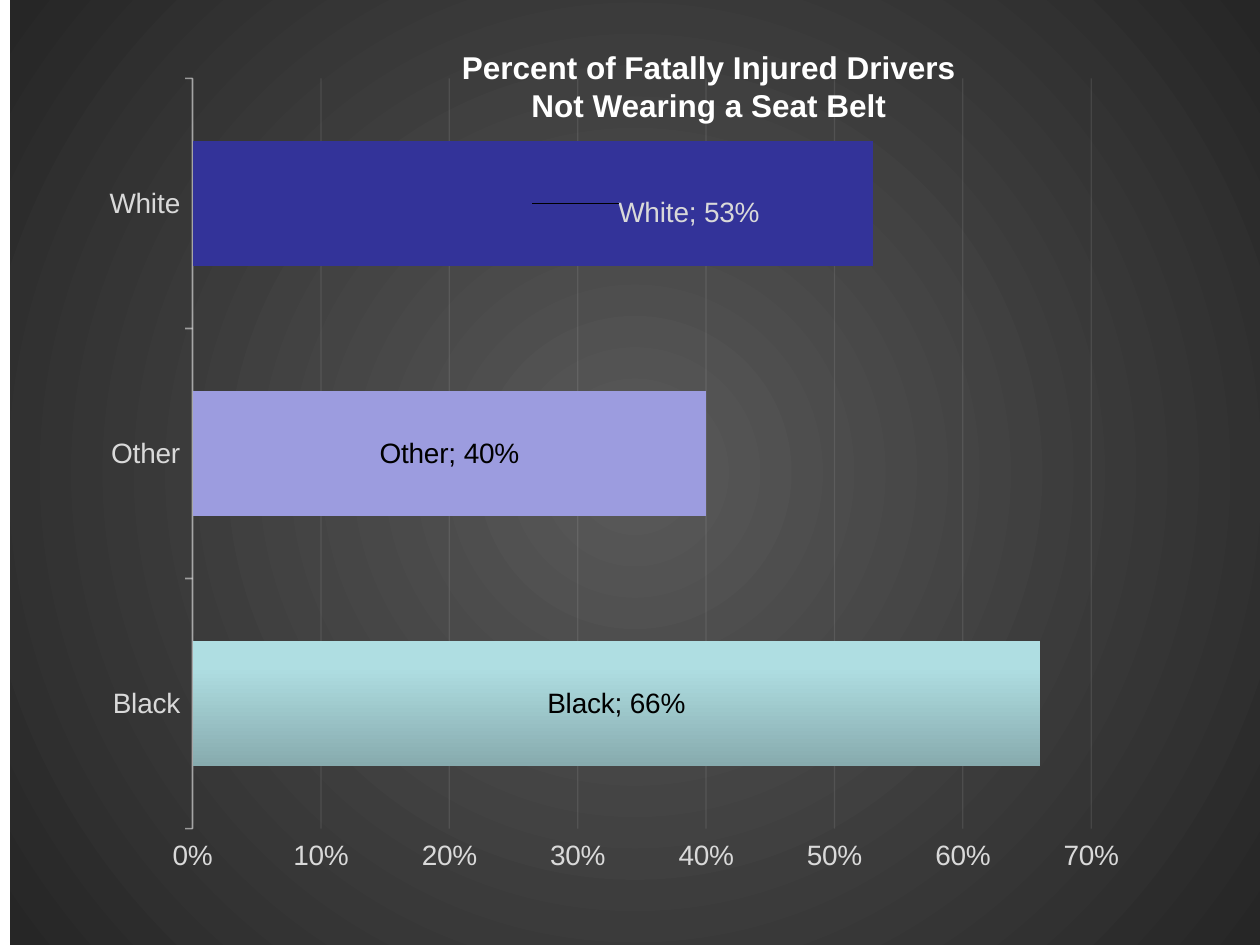
"""Builds a slide with a bar chart of drivers not wearing a seat belt."""
from lxml.etree import SubElement
from pptx import Presentation
from pptx.chart.data import CategoryChartData
from pptx.dml.color import RGBColor
from pptx.enum.chart import XL_CHART_TYPE, XL_LABEL_POSITION, XL_TICK_MARK
from pptx.enum.text import MSO_ANCHOR, PP_ALIGN
from pptx.oxml import parse_xml
from pptx.oxml.ns import nsdecls, qn
from pptx.util import Inches, Pt

COLORS = {
    "title": "FFFFFF", "label": "D9D9D9", "dark_label": "000000", "line": "F2F2F2",
    "glow": "595959", "edge": "262626",
    "teal_dark": "87ABAE", "teal": "AFDEE2", "teal_light": "AFE0E4",
    "lilac": "9C9CDF", "navy": "333399",
}
RADIAL = ('<a:path path="circle"><a:fillToRect l="50000" t="50000" '
          'r="50000" b="50000"/></a:path>')
UPWARD = '<a:lin ang="16200000" scaled="0"/>'


def rgb(name):
    return RGBColor.from_string(COLORS[name])


def gradient(stops, direction):
    marks = "".join(
        f'<a:gs pos="{position * 1000}"><a:srgbClr val="{COLORS[name]}"/></a:gs>'
        for position, name in stops)
    return parse_xml(f'<a:gradFill {nsdecls("a")} rotWithShape="1">'
                     f'<a:gsLst>{marks}</a:gsLst>{direction}</a:gradFill>')


def manual_layout(x, y, width=None, height=None):
    parts = [("x", x), ("y", y)]
    if width:
        parts = [("layoutTarget", "inner"), ("xMode", "edge"), ("yMode", "edge"),
                 *parts, ("w", width), ("h", height)]
    body = "".join(f'<c:{tag} val="{value}"/>' for tag, value in parts)
    return parse_xml(f'<c:layout {nsdecls("c")}><c:manualLayout>{body}'
                     '</c:manualLayout></c:layout>')


class SlideBuilder:
    def __init__(self, page, family="Arial"):
        self.page = page
        self.family = family

    def style(self, font, size, color, bold=False):
        font.name, font.size, font.bold = self.family, Pt(size), bold
        font.color.rgb = rgb(color)

    def stroke(self, line, width, opacity):
        line.width = Pt(width)
        line.color.rgb = rgb("line")
        for color in line._get_or_add_ln().iter(qn("a:srgbClr")):
            SubElement(color, qn("a:alpha"), val=str(opacity * 1000))

    def title(self, lines, left, top, width, height):
        box = self.page.shapes.title
        box.left, box.top, box.width, box.height = map(Inches, (left, top, width, height))
        frame = box.text_frame
        frame.word_wrap = True
        frame.vertical_anchor = MSO_ANCHOR.TOP
        frame.text = "\n".join(lines)
        for para in frame.paragraphs:
            para.alignment = PP_ALIGN.CENTER
            para.space_before = Pt(0)
            para.line_spacing = 1.0
            self.style(para.font, 18, "title", bold=True)
        tree = self.page.shapes._spTree
        tree.append(box._element)

    def bar_chart(self, values, left, top, width, height):
        data = CategoryChartData(number_format="0%")
        data.categories = list(values)
        data.add_series("Series 1", list(values.values()))
        chart = self.page.shapes.add_chart(
            XL_CHART_TYPE.BAR_CLUSTERED, *map(Inches, (left, top, width, height)), data).chart
        chart.has_legend = chart.has_title = False
        self.style(chart.font, 10, "dark_label")
        self.background(chart)
        self.axes(chart)
        plot = chart.plots[0]
        plot.gap_width = 100
        plot.vary_by_categories = False
        self.bars(plot.series[0])
        self.labels(plot)
        return chart

    def background(self, chart):
        space = chart._chartSpace
        shape = parse_xml(f'<c:spPr {nsdecls("c", "a")}><a:ln><a:noFill/></a:ln></c:spPr>')
        shape.insert(0, gradient([(0, "glow"), (100, "edge")], RADIAL))
        space.find(qn("c:chart")).addnext(shape)
        area = space.find(".//" + qn("c:plotArea"))
        for layout in area.findall(qn("c:layout")):
            area.remove(layout)
        area.insert(0, manual_layout(0.146, 0.083, 0.719, 0.794))

    def axes(self, chart):
        for axis in (chart.category_axis, chart.value_axis):
            axis.major_tick_mark = XL_TICK_MARK.OUTSIDE
            axis.minor_tick_mark = XL_TICK_MARK.NONE
            self.style(axis.tick_labels.font, 16, "label")
        self.stroke(chart.category_axis.format.line, 1, 54)
        scale = chart.value_axis
        scale.minimum_scale, scale.maximum_scale, scale.major_unit = 0, 0.7, 0.1
        scale.tick_labels.number_format = "0%"
        scale.tick_labels.number_format_is_linked = False
        scale.format.line.fill.background()
        scale.has_major_gridlines = True
        self.stroke(scale.major_gridlines.format.line, 0.75, 10)

    def bars(self, series):
        stops = [(0, "teal_dark"), (80, "teal"), (100, "teal_light")]
        series._element.get_or_add_spPr().append(gradient(stops, UPWARD))
        for index, color in ((1, "lilac"), (2, "navy")):
            fill = series.points[index].format.fill
            fill.solid()
            fill.fore_color.rgb = rgb(color)

    def labels(self, plot):
        series = plot.series[0]
        shared = series.data_labels
        shared.show_value = shared.show_category_name = True
        shared.number_format = "0%"
        shared.number_format_is_linked = False
        shared.position = XL_LABEL_POSITION.CENTER
        self.style(shared.font, 16, "label")
        for index, color in enumerate(("dark_label", "dark_label", "label")):
            label = series.points[index].data_label
            self.style(label.font, 16, color)
            label.position = XL_LABEL_POSITION.CENTER
        group = shared._element
        entries = group.findall(qn("c:dLbl"))
        for entry in (*entries, group):
            entry.find(qn("c:showCatName")).set("val", "1")
            flags = [child for child in entry if child.tag.startswith(qn("c:show"))
                     and child.tag != qn("c:showLeaderLines")]
            separator = parse_xml(f'<c:separator {nsdecls("c")}>; </c:separator>')
            flags[-1].addnext(separator)
        entries[-1].find(qn("c:idx")).addnext(manual_layout(0.125, 0.01))


def main():
    deck = Presentation()
    deck.slide_width, deck.slide_height = Inches(10), Inches(7.5)
    builder = SlideBuilder(deck.slides.add_slide(deck.slide_layouts[5]))
    builder.bar_chart({"Black": 0.66, "Other": 0.4, "White": 0.53}, 0.08, 0, 9.92, 7.5)
    builder.title(["Percent of Fatally Injured Drivers", "Not Wearing a Seat Belt"],
                  2.25, 0.33, 6.75, 0.71)
    deck.save("out.pptx")


if __name__ == "__main__":
    main()
